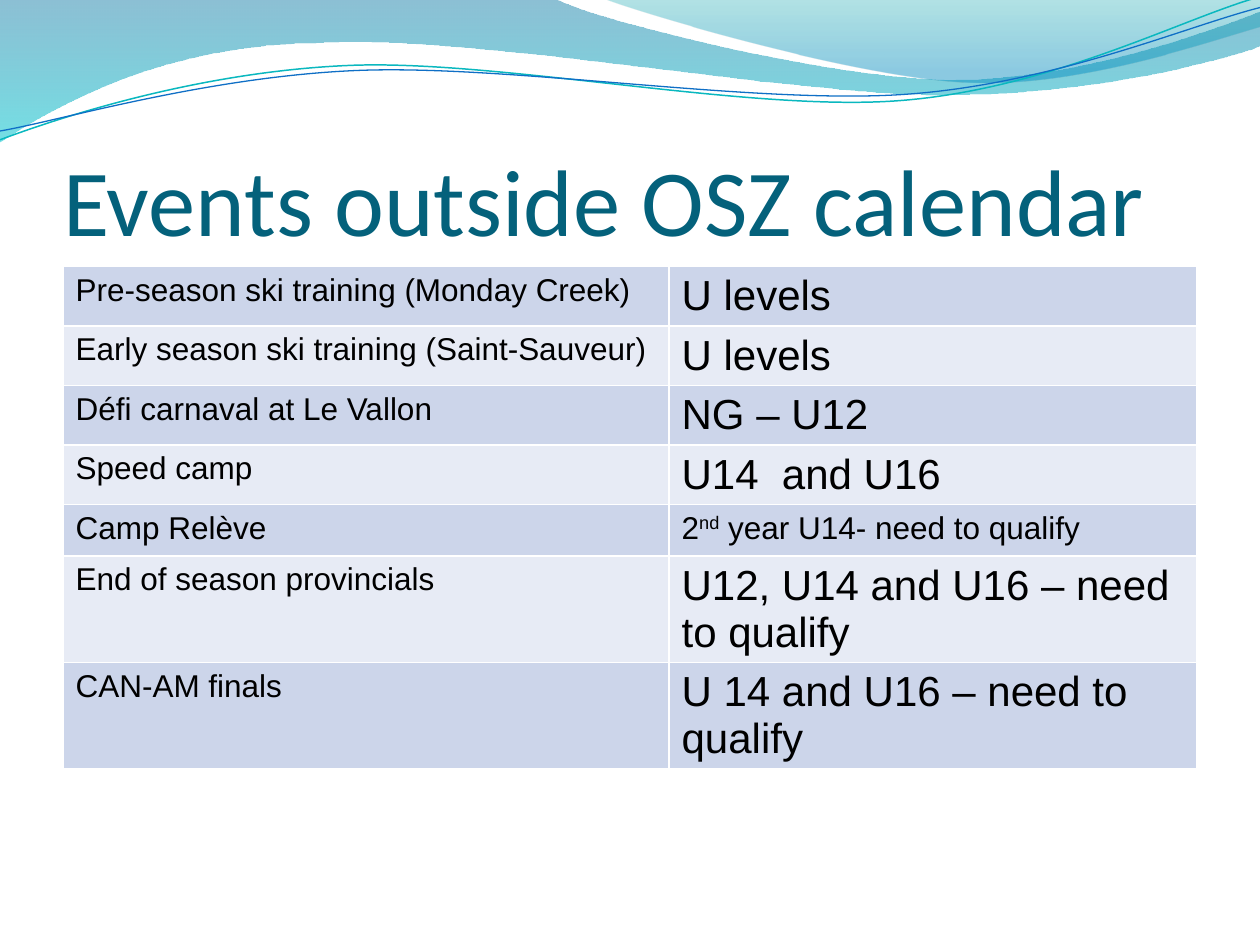
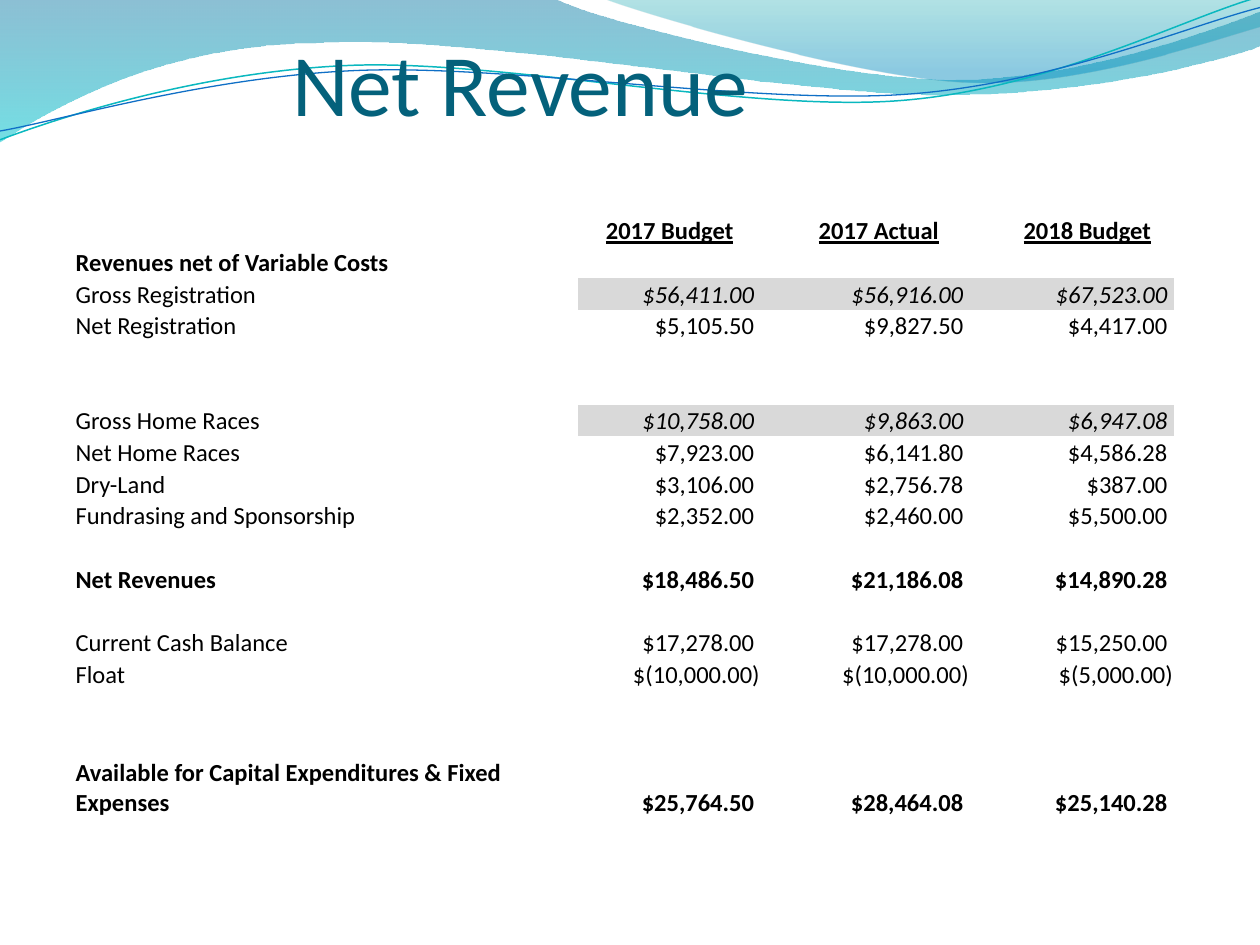
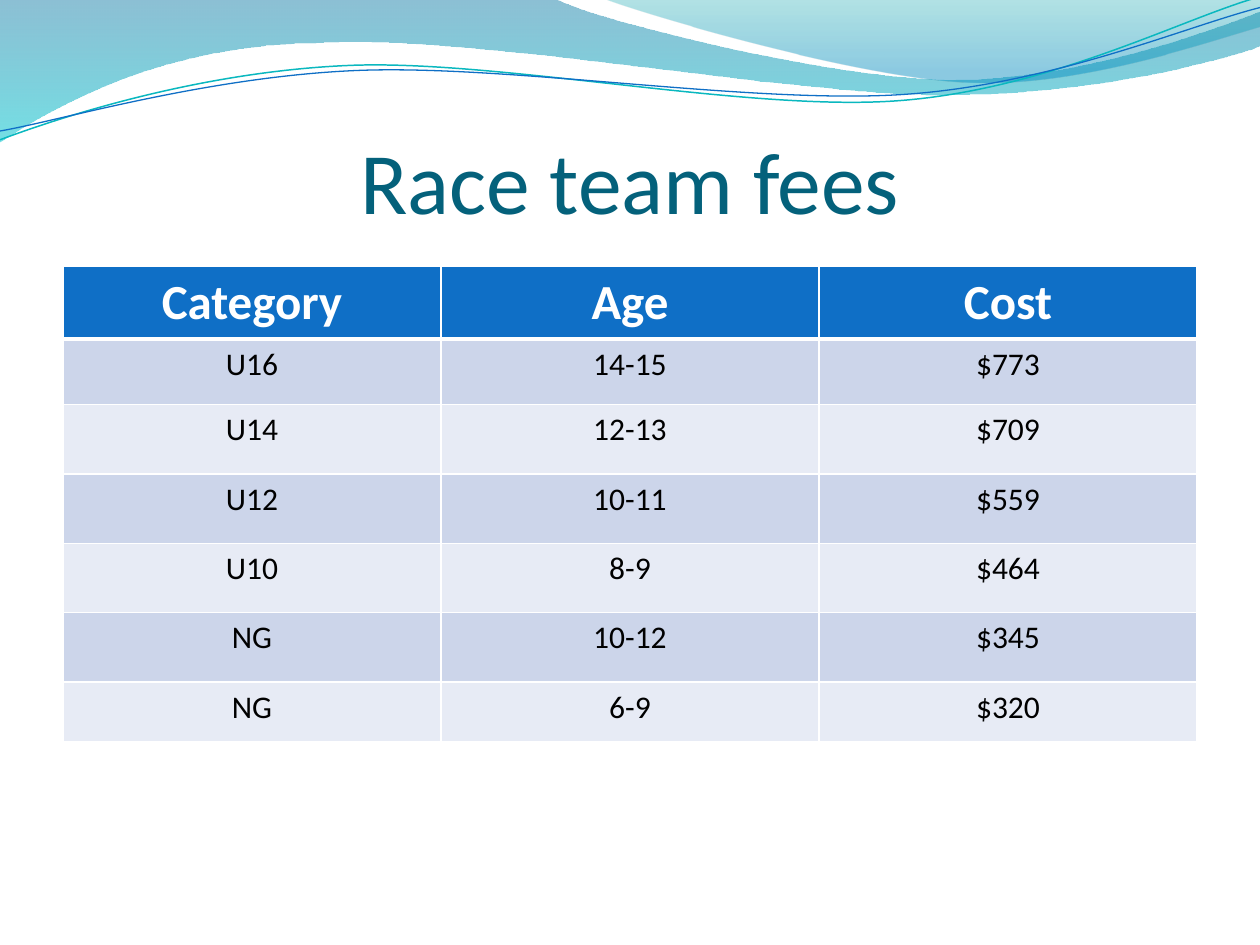
from collections import namedtuple
from itertools import chain

from lxml.etree import SubElement
from pptx import Presentation
from pptx.dml.color import RGBColor
from pptx.enum.text import MSO_ANCHOR as Anchor, MSO_AUTO_SIZE as AutoSize, PP_ALIGN as Align
from pptx.oxml.ns import qn
from pptx.util import Inches, Pt

Box = namedtuple("Box", "left top width height")

SLIDE_WIDTH, SLIDE_HEIGHT = 10, 7.5
TITLE_COLOR, HEADER_COLOR, WHITE, BLACK = "04617B", "0F6FC6", "FFFFFF", "000000"
BANDS = ["CCD5EA", "E7EBF5"]
SUBTOTAL_COLOR = "D9D9D9"
NO_STYLE = "{2D5ABB26-0587-4C30-8999-92F81FD0307C}"
TITLE_BOX = Box(0.05, 0.103, 0.9, 0.167)
REVENUE_TITLE_BOX = Box(0.232, -0.025, 0.9, 0.167)

WAVES = [
    {"start": (0, -0.01), "curves": [
        [(4.4, -0.01)],
        [(4.76, 0.17), (6.64, 0.63), (7.58, 0.63)],
        [(8.53, 0.63), (9.58, 0.26), (10, 0.09)],
        [(10.01, 0.36)],
        [(9.83, 0.44), (8.7, 0.76), (7.46, 0.75)],
        [(6.22, 0.75), (3.82, 0.28), (2.57, 0.34)],
        [(1.29, 0.35), (0.46, 0.83), (-0.01, 1.13)]],
     "stops": [(0, "0074A1", 45), (1, "00C6CF", 55)]},
    {"start": (4.79, -0.01), "curves": [
        [(5.09, 0.11), (6.82, 0.62), (7.69, 0.65)],
        [(8.56, 0.69), (9.61, 0.32), (10, 0.21)],
        [(10, 0)]],
     "stops": [(0, "00A1A9", 30), (0.8, "008BBF", 45)]},
    {"start": (0, 1.11), "curves": [
        [(0.48, 0.93), (1.58, 0.57), (2.77, 0.52)],
        [(3.95, 0.47), (5.93, 0.89), (7.13, 0.8)],
        [(8.33, 0.71), (9.38, 0.15), (9.98, -0.02)]],
     "line": ("0AB8BF", 0.85)},
    {"start": (0, 1.04), "curves": [
        [(0.47, 0.96), (1.64, 0.61), (2.83, 0.56)],
        [(4.03, 0.51), (5.97, 0.83), (7.17, 0.75)],
        [(8.36, 0.67), (9.41, 0.21), (10, 0.06)]],
     "line": ("0F6FC6", 0.75)},
]

EVENTS = [
    ("Pre-season ski training (Monday Creek)", "U levels"),
    ("Early season ski training (Saint-Sauveur)", "U levels"),
    ("Défi carnaval at Le Vallon", "NG – U12"),
    ("Speed camp", "U14  and U16"),
    ("Camp Relève", ("2", "nd", " year U14- need to qualify")),
    ("End of season provincials", "U12, U14 and U16 – need to qualify"),
    ("CAN-AM finals", "U 14 and U16 – need to qualify"),
]

REVENUE_HEADINGS = ["2017 Budget", "2017 Actual", "2018 Budget"]
REVENUES = [
    ("Revenues net of Variable Costs", [], "bold"),
    ("Gross Registration", [56411, 56916, 67523], "shaded"),
    ("Net Registration", [5105.5, 9827.5, 4417], ""),
    None,
    None,
    ("Gross Home Races", [10758, 9863, 6947.08], "shaded"),
    ("Net Home Races", [7923, 6141.8, 4586.28], ""),
    ("Dry-Land", [3106, 2756.78, 387], ""),
    ("Fundrasing and Sponsorship", [2352, 2460, 5500], ""),
    None,
    ("Net Revenues", [18486.5, 21186.08, 14890.28], "bold"),
    None,
    ("Current Cash Balance", [17278, 17278, 15250], ""),
    ("Float", [-10000, -10000, -5000], ""),
    None,
    ("Available for Capital Expenditures & Fixed Expenses",
     [25764.5, 28464.08, 25140.28], "bold"),
]

FEES = [
    ("Category", "Age", "Cost"),
    ("U16", "14-15", "$773"),
    ("U14", "12-13", "$709"),
    ("U12", "10-11", "$559"),
    ("U10", "8-9", "$464"),
    ("NG", "10-12", "$345"),
    ("NG", "6-9", "$320"),
]


def color(value):
    return RGBColor.from_string(value)


def set_format(target, values):
    for name, value in values.items():
        setattr(target, name, value)


def place(box):
    return (Inches(box.left * SLIDE_WIDTH), Inches(box.top * SLIDE_HEIGHT),
            Inches(box.width * SLIDE_WIDTH), Inches(box.height * SLIDE_HEIGHT))


def add_run(paragraph, text, size, font_color=BLACK, name="Calibri", **font_format):
    run = paragraph.add_run()
    run.text = text
    set_format(run.font, {"size": Pt(size), "name": name, **font_format})
    run.font.color.rgb = color(font_color)
    return run


def bend_segments(shape, curves):
    segments = iter(list(shape.element.iter(qn("a:lnTo"))))
    for controls in curves:
        first, *others = [next(segments) for _ in controls]
        if others:
            outline = first.getparent()
            bend = SubElement(outline, qn("a:cubicBezTo"))
            first.addprevious(bend)
            for segment in (first, *others):
                bend.append(segment[0])
                outline.remove(segment)


def fill_gradient(shape, stops):
    shape.fill.gradient()
    shape.fill.gradient_angle = 270
    for stop, (position, stop_color, _) in zip(shape.fill.gradient_stops, stops):
        stop.position = position
        stop.color.rgb = color(stop_color)
    gradient = shape.element.spPr.find(qn("a:gradFill"))
    for node, (_, _, opacity) in zip(gradient.iter(qn("a:srgbClr")), stops):
        SubElement(node, qn("a:alpha"), val=str(opacity * 1000))
    shape.line.fill.background()


def add_wave(slide, wave):
    points = chain.from_iterable(wave["curves"])
    builder = slide.shapes.build_freeform(*map(Inches, wave["start"]))
    builder.add_line_segments([tuple(map(Inches, point)) for point in points], close="stops" in wave)
    shape = builder.convert_to_shape()
    bend_segments(shape, wave["curves"])
    shape.shadow.inherit = False
    if "stops" in wave:
        fill_gradient(shape, wave["stops"])
    else:
        line_color, width = wave["line"]
        shape.fill.background()
        shape.line.color.rgb = color(line_color)
        shape.line.width = Pt(width)
    return shape


def move_waves_to_layout(slide):
    for index, wave in enumerate(WAVES):
        shape = add_wave(slide, wave)
        slide.slide_layout.shapes.element.insert(2 + index, shape.element)


def add_title(slide, box, text, size, alignment=Align.LEFT, anchor=Anchor.BOTTOM):
    title = slide.shapes.title
    set_format(title, dict(zip(("left", "top", "width", "height"), place(box))))
    set_format(title.text_frame, {
        "margin_left": 0, "margin_right": 0, "margin_top": Inches(0.05), "margin_bottom": 0,
        "vertical_anchor": anchor, "word_wrap": True, "auto_size": AutoSize.NONE})
    paragraph = title.text_frame.paragraphs[0]
    paragraph.alignment = alignment
    add_run(paragraph, text, size, TITLE_COLOR)


def add_plain_table(slide, box, column_weights, row_weights):
    left, top, width, height = place(box)
    frame = slide.shapes.add_table(len(row_weights), len(column_weights), left, top, width, height)
    next(frame.element.iter(qn("a:tableStyleId"))).text = NO_STYLE
    table = frame.table
    set_format(table, {"first_row": False, "horz_banding": False})
    for column, weight in zip(table.columns, column_weights):
        column.width = int(width * weight / sum(column_weights))
    for row, weight in zip(table.rows, row_weights):
        row.height = int(height * weight / sum(row_weights))
    return table


def fill_cell(cell, fill_color):
    cell.fill.solid()
    cell.fill.fore_color.rgb = color(fill_color)


def add_borders(cell, top=1, bottom=1):
    properties = cell._tc.get_or_add_tcPr()
    for side, width in {"L": 1, "R": 1, "T": top, "B": bottom}.items():
        line = SubElement(properties, qn(f"a:ln{side}"), w=str(Pt(width)))
        SubElement(SubElement(line, qn("a:solidFill")), qn("a:srgbClr"), val=WHITE)


def events_slide(slide):
    add_title(slide, TITLE_BOX, "Events outside OSZ calendar", 54)
    table = add_plain_table(slide, Box(0.05, 0.282, 0.9, 0.383), [4.81, 4.19], [1] * len(EVENTS))
    for row, texts in enumerate(EVENTS):
        for column, text in enumerate(texts):
            cell = table.cell(row, column)
            add_borders(cell)
            fill_cell(cell, BANDS[row % 2])
            paragraph = cell.text_frame.paragraphs[0]
            if isinstance(text, str):
                add_run(paragraph, text, 24 if column else 18, name="Arial")
            else:
                runs = [add_run(paragraph, part, 18, name="Arial") for part in text]
                runs[1]._r.get_or_add_rPr().set("baseline", "30000")


def dollars(amount):
    return f" ${amount:,.2f} " if amount >= 0 else f" $({-amount:,.2f})"


def write_revenue(cell, text, alignment, **font_format):
    paragraph = cell.text_frame.paragraphs[0]
    paragraph.alignment = alignment
    add_run(paragraph, text, 14, **font_format)


def revenue_slide(slide):
    add_title(slide, REVENUE_TITLE_BOX, "Net Revenue", 50)
    table = add_plain_table(slide, Box(0.059, 0.227, 0.873, 0.639),
                            [4, 1.45, 0.21, 1.45, 0.24, 1.38], [0.25] * len(REVENUES) + [0.76])
    for cell in table.iter_cells():
        set_format(cell, {
            "margin_left": Inches(0.01), "margin_right": Inches(0.01),
            "margin_top": Inches(0.01), "margin_bottom": 0, "vertical_anchor": Anchor.BOTTOM})
        cell.fill.background()
    for index, heading in enumerate(REVENUE_HEADINGS):
        write_revenue(table.cell(0, 1 + 2 * index), heading, Align.CENTER, bold=True, underline=True)
    for row, entry in enumerate(REVENUES, 1):
        if not entry:
            continue
        label, amounts, kind = entry
        bold, shaded = kind == "bold", kind == "shaded"
        write_revenue(table.cell(row, 0), label, Align.LEFT, bold=bold)
        for index, amount in enumerate(amounts):
            write_revenue(table.cell(row, 1 + 2 * index), dollars(amount), Align.RIGHT,
                          bold=bold, italic=shaded)
        if shaded:
            for column in range(1, len(table.columns)):
                fill_cell(table.cell(row, column), SUBTOTAL_COLOR)
    for cell in table.iter_cells():
        if not cell.text:
            SubElement(cell.text_frame.paragraphs[0]._p, qn("a:endParaRPr"), sz="1400")


def fees_slide(slide):
    add_title(slide, TITLE_BOX, "Race team fees", 50, Align.CENTER, Anchor.MIDDLE)
    table = add_plain_table(slide, Box(0.05, 0.282, 0.9, 0.502), [1] * 3,
                            [0.57, 0.52, 0.55, 0.55, 0.55, 0.55, 0.47])
    for row, texts in enumerate(FEES):
        for column, text in enumerate(texts):
            cell = table.cell(row, column)
            header = row == 0
            add_borders(cell, top=3 if row == 1 else 1, bottom=3 if header else 1)
            fill_cell(cell, HEADER_COLOR if header else BANDS[(row - 1) % 2])
            paragraph = cell.text_frame.paragraphs[0]
            paragraph.alignment = Align.CENTER
            add_run(paragraph, text, 28 if header else 18, WHITE if header else BLACK, bold=header)


def main():
    presentation = Presentation()
    set_format(presentation, {"slide_width": Inches(SLIDE_WIDTH), "slide_height": Inches(SLIDE_HEIGHT)})
    title_only = presentation.slide_layouts[5]
    for build in (events_slide, revenue_slide, fees_slide):
        build(presentation.slides.add_slide(title_only))
    move_waves_to_layout(presentation.slides[0])
    presentation.save("out.pptx")


if __name__ == "__main__":
    main()
